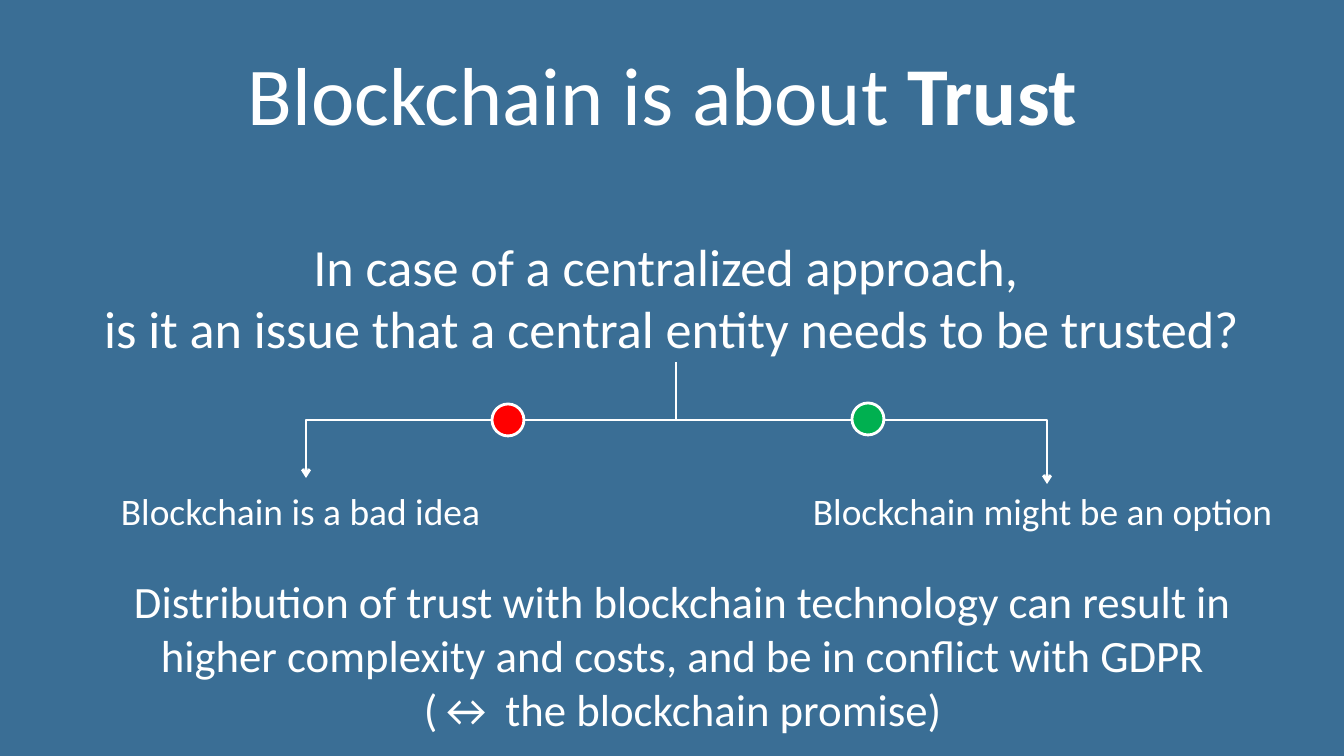
from dataclasses import dataclass

from lxml import etree
from pptx import Presentation
from pptx.dml.color import RGBColor
from pptx.enum.shapes import MSO_CONNECTOR, MSO_SHAPE
from pptx.enum.text import MSO_ANCHOR, MSO_AUTO_SIZE, PP_ALIGN
from pptx.oxml.ns import qn
from pptx.util import Emu, Pt

EMU_PER_PX = 914400 / 100.8


@dataclass(frozen=True)
class Theme:
    font: str = "Calibri"
    background: RGBColor = RGBColor(0x3A, 0x6E, 0x95)
    foreground: RGBColor = RGBColor(0xFF, 0xFF, 0xFF)
    no: RGBColor = RGBColor(0xFF, 0x00, 0x00)
    yes: RGBColor = RGBColor(0x00, 0xB0, 0x50)
    title_size: float = 58.7
    question_size: float = 37.3
    conclusion_size: float = 32
    answer_size: float = 26.7
    line_width: float = 2


THEME = Theme()


def px(length):
    return Emu(round(length * EMU_PER_PX))


def format_paragraph(paragraph, size, align):
    paragraph.alignment = align
    font = paragraph.font
    font.name, font.size = THEME.font, Pt(size)
    font.color.rgb = THEME.foreground


def set_title(slide, plain, strong):
    title = slide.shapes.title
    title.left, title.top, title.width, title.height = map(px, (67, 30, 1210, 126))
    frame = title.text_frame
    frame.auto_size = MSO_AUTO_SIZE.NONE
    frame.vertical_anchor = MSO_ANCHOR.MIDDLE
    paragraph = frame.paragraphs[0]
    paragraph.add_run().text = plain
    run = paragraph.add_run()
    run.text, run.font.bold = strong, True
    format_paragraph(paragraph, THEME.title_size, PP_ALIGN.CENTER)


def add_text(slide, box, text, size, align=PP_ALIGN.CENTER, wrap=False):
    frame = slide.shapes.add_textbox(*map(px, box)).text_frame
    frame.word_wrap = wrap
    frame.auto_size = MSO_AUTO_SIZE.NONE if wrap else MSO_AUTO_SIZE.SHAPE_TO_FIT_TEXT
    frame.text = text
    for paragraph in frame.paragraphs:
        format_paragraph(paragraph, size, align)


def add_branch(slide, start, end, bend):
    """Elbow arrow that leaves and arrives vertically; bend is in 1/100000 of its drop."""
    (x1, y1), (x2, y2) = start, end
    drop, reach = y2 - y1, abs(x2 - x1)
    left, top = (x1 + x2 - drop) / 2, (y1 + y2 - reach) / 2
    goes_right = x2 > x1
    near, far = (left + drop, left) if goes_right else (left, left + drop)
    branch = slide.shapes.add_connector(
        MSO_CONNECTOR.ELBOW, px(near), px(top), px(far), px(top + reach))
    branch.line.color.rgb = THEME.foreground
    branch.line.width = Pt(THEME.line_width)

    properties = branch._element.spPr
    quarter_turns = 3 if goes_right else 1
    properties.find(qn("a:xfrm")).set("rot", str(quarter_turns * 5400000))
    adjustments = properties.find(qn("a:prstGeom")).find(qn("a:avLst"))
    etree.SubElement(adjustments, qn("a:gd"), name="adj1", fmla=f"val {bend}")
    etree.SubElement(properties.find(qn("a:ln")), qn("a:tailEnd"), type="arrow")
    etree.SubElement(properties, qn("a:effectLst"))


def add_dot(slide, left, top, color):
    dot = slide.shapes.add_shape(MSO_SHAPE.OVAL, *map(px, (left, top, 32, 32)))
    dot.shadow.inherit = False
    dot.fill.solid()
    dot.fill.fore_color.rgb = color
    dot.line.color.rgb = THEME.foreground
    dot.line.width = Pt(THEME.line_width)


def main():
    presentation = Presentation()
    presentation.slide_width, presentation.slide_height = px(1344), px(756)
    slide = presentation.slides.add_slide(presentation.slide_layouts[5])
    slide.background.fill.solid()
    slide.background.fill.fore_color.rgb = THEME.background

    set_title(slide, "Blockchain is about ", "Trust ")
    add_text(slide, (67, 229, 1210, 382),
             "In case of a centralized approach, \v"
             "is it an issue that a central entity needs to be trusted?",
             THEME.question_size, wrap=True)

    add_branch(slide, (676, 362), (306, 478), bend=50000)
    add_branch(slide, (676, 420), (1047, 484), bend=100)
    add_dot(slide, 852, 403, THEME.yes)
    add_dot(slide, 492, 404, THEME.no)

    add_text(slide, (111, 483, 382, 55), "Blockchain is a bad idea",
             THEME.answer_size, PP_ALIGN.LEFT)
    add_text(slide, (803, 483, 483, 55), "Blockchain might be an option",
             THEME.answer_size, PP_ALIGN.LEFT)
    add_text(slide, (118, 569, 1130, 173),
             "Distribution of trust with blockchain technology can result in\n"
             "higher complexity and costs, and be in conflict with GDPR\n"
             "(↔ the blockchain promise)",
             THEME.conclusion_size)
    presentation.save("out.pptx")


if __name__ == "__main__":
    main()
